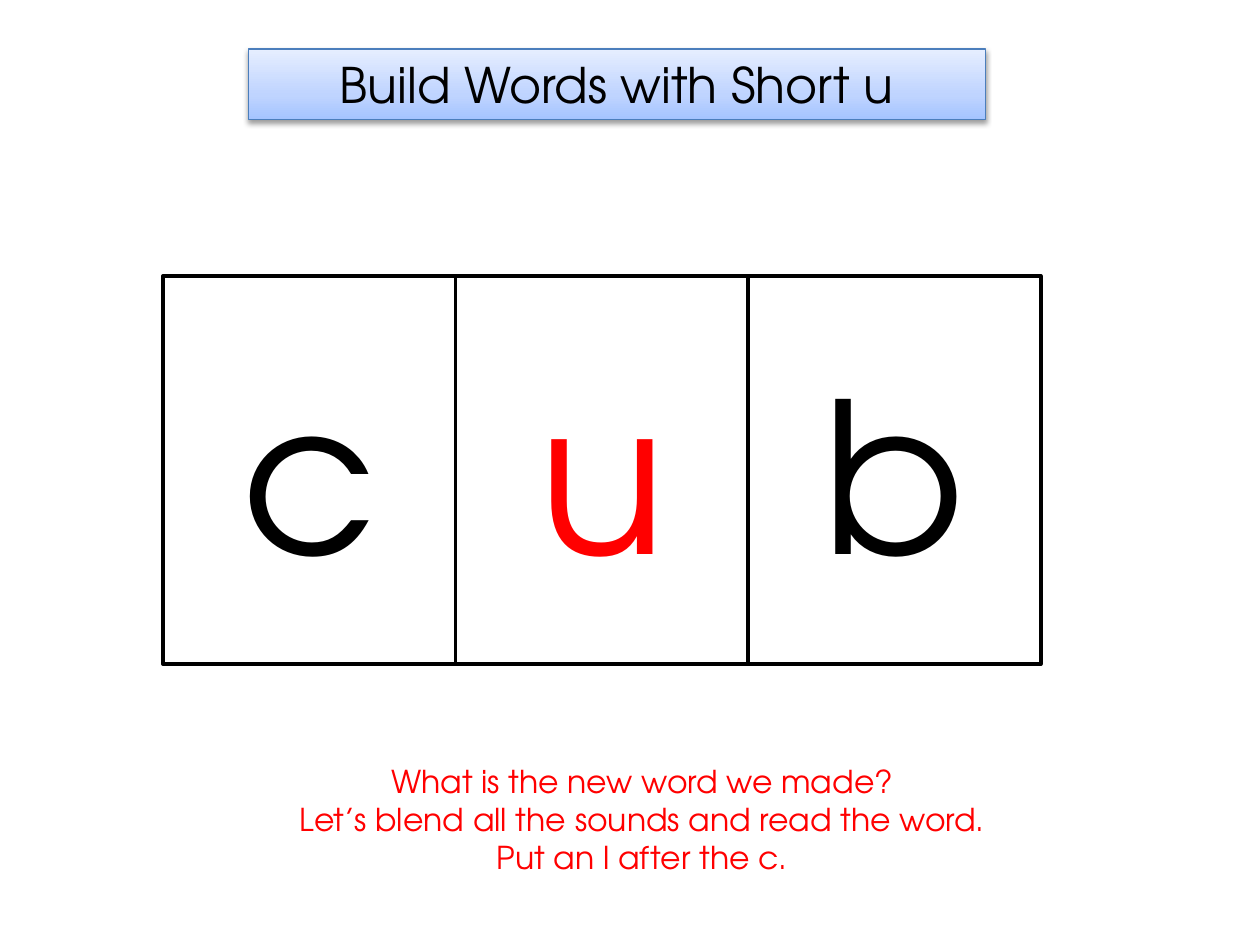
from lxml.etree import SubElement
from pptx import Presentation
from pptx.dml.color import RGBColor
from pptx.enum.shapes import MSO_SHAPE as Preset
from pptx.enum.text import MSO_ANCHOR as Anchor, MSO_AUTO_SIZE as AutoSize, PP_ALIGN as Align
from pptx.oxml.ns import qn
from pptx.util import Pt

FONT = "TeX Gyre Adventor"
BLACK, RED, WHITE = "000000", "FF0000", "FFFFFF"
BANNER_STOPS = [(0, "A4C4FF"), (35, "BFD4FF"), (100, "E6EEFF")]


def color(value):
    return RGBColor.from_string(value)


def add_color(parent, value):
    return SubElement(parent, qn("a:srgbClr"), val=value)


class Builder:
    def __init__(self, page, font):
        self.page = page
        self.font = font

    def add_lines(self, shape, lines, size, ink):
        frame = shape.text_frame
        frame.word_wrap = True
        for index, line in enumerate(lines):
            para = frame.paragraphs[0] if index == 0 else frame.add_paragraph()
            para.alignment = Align.CENTER
            span = para.add_run()
            span.text = line
            span.font.name = self.font
            span.font.size = Pt(size)
            span.font.color.rgb = color(ink)
        return frame

    def box(self, place, text, size, ink, outline, weight):
        box = self.page.shapes.add_shape(Preset.RECTANGLE, *map(Pt, place))
        box.shadow.inherit = False
        box.fill.solid()
        box.fill.fore_color.rgb = color(WHITE)
        box.line.color.rgb = color(outline)
        box.line.width = Pt(weight)
        self.add_lines(box, [text], size, ink).vertical_anchor = Anchor.MIDDLE
        return box

    def banner(self, place, text, size):
        """Add a box with a vertical gradient and a soft shadow below it."""
        box = self.box(place, text, size, BLACK, "4B7EBC", 0.75)
        box.fill.gradient()
        box.fill.gradient_angle = 90
        properties = box._element.spPr
        stops = properties.find(".//" + qn("a:gsLst"))
        for stop in list(stops):
            stops.remove(stop)
        for percent, tint in BANNER_STOPS:
            add_color(SubElement(stops, qn("a:gs"), pos=str(percent * 1000)), tint)
        shadow = SubElement(
            properties.find(qn("a:effectLst")), qn("a:outerShdw"),
            blurRad=str(Pt(3.1)), dist=str(Pt(1.6)), dir="5400000", rotWithShape="0")
        SubElement(add_color(shadow, BLACK), qn("a:alpha"), val="38000")

    def text(self, place, lines, size, ink):
        box = self.page.shapes.add_textbox(*map(Pt, place))
        self.add_lines(box, lines, size, ink).auto_size = AutoSize.SHAPE_TO_FIT_TEXT


def main():
    deck = Presentation()
    deck.slide_width, deck.slide_height = Pt(720), Pt(540)
    builder = Builder(deck.slides.add_slide(deck.slide_layouts[6]), FONT)

    builder.banner((141.84, 28, 421.2, 40.4), "Build Words with Short u", 28)

    left, top, width, height = 93.2, 157.7, 167.2, 221.8
    for column, letter in enumerate("cub"):
        ink = RED if letter == "u" else BLACK
        place = (left + column * width, top, width, height)
        builder.box(place, letter, 120, ink, BLACK, 2)

    builder.text((116, 432, 502, 72.7), [
        "What is the new word we made?",
        "Let’s blend all the sounds and read the word.",
        "Put an l after the c.",
    ], 18, RED)

    deck.save("out.pptx")


if __name__ == "__main__":
    main()
